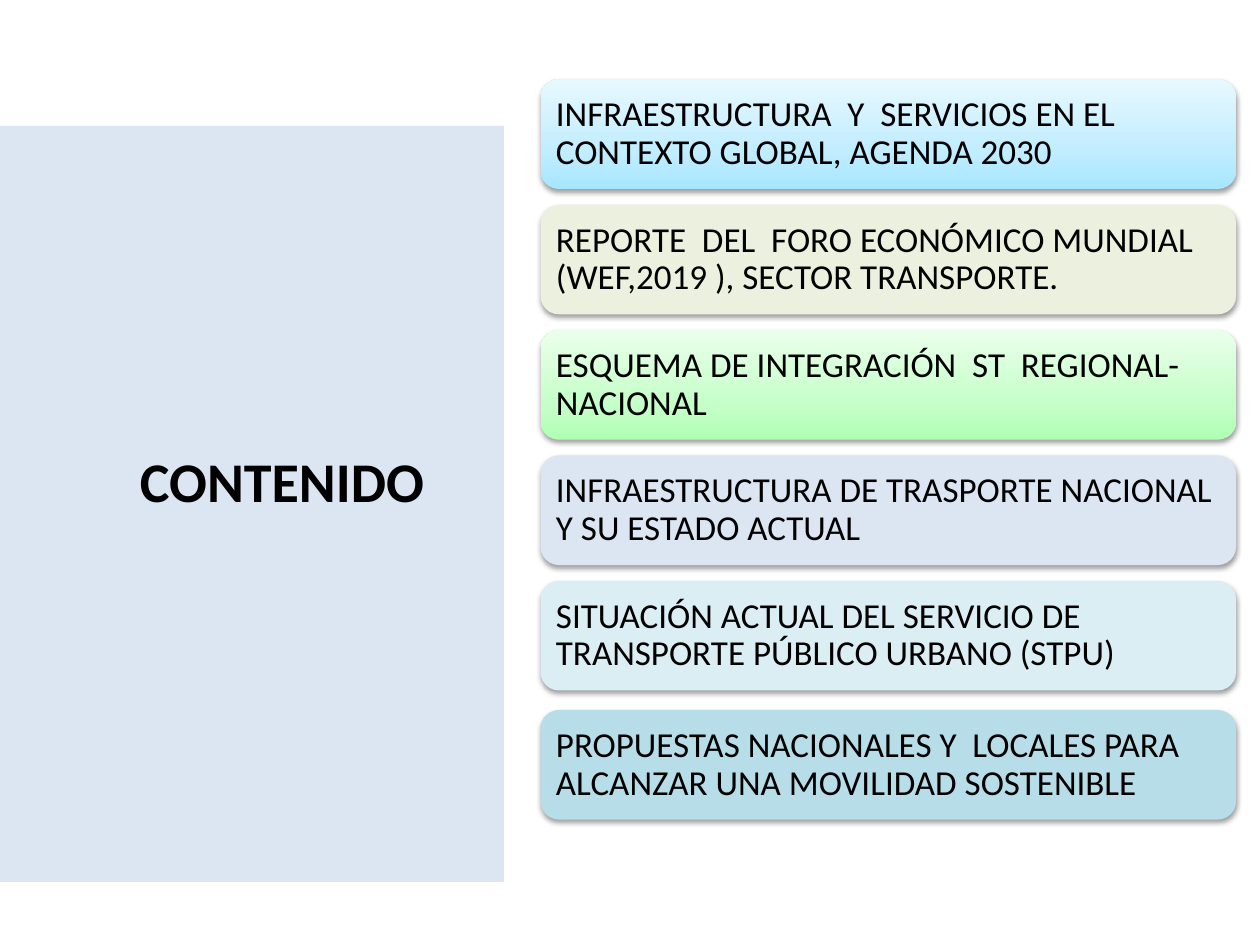
from lxml.etree import SubElement
from pptx import Presentation
from pptx.dml.color import RGBColor
from pptx.enum.shapes import MSO_SHAPE as Shape
from pptx.enum.text import MSO_ANCHOR as Anchor, PP_ALIGN as Align
from pptx.oxml.ns import qn
from pptx.util import Inches, Pt

FONT = "Calibri"
CARD_LEFT, CARD_TOP, CARD_WIDTH, CARD_HEIGHT = 4.29, 0.63, 5.52, 0.87
ROW_PITCH = 0.995
PANEL_LEFT, PANEL_TOP, PANEL_EDGE, PANEL_BOTTOM = 0.4, 0.52, 3.81, 6.96
PANEL_BULGE, CURVE_STEPS = 0.18, 40
STOPS = (0, 35, 100)

CARDS = [
    (0, "INFRAESTRUCTURA  Y  SERVICIOS EN EL CONTEXTO GLOBAL, AGENDA 2030",
     ("A7E6FF", "C1EDFF", "E7F8FF")),
    (1, "REPORTE  DEL  FORO ECONÓMICO MUNDIAL (WEF,2019 ), SECTOR TRANSPORTE.", ("EBF1DE",)),
    (2, "ESQUEMA DE INTEGRACIÓN  ST  REGIONAL-NACIONAL", ("B0FFB4", "C7FFCA", "EAFFEB")),
    (3, "INFRAESTRUCTURA DE TRASPORTE NACIONAL Y SU ESTADO ACTUAL", ("DCE6F2",)),
    (4, "SITUACIÓN ACTUAL DEL SERVICIO DE TRANSPORTE PÚBLICO URBANO (STPU)", ("DBEEF4",)),
    (5.03, "PROPUESTAS NACIONALES Y  LOCALES PARA ALCANZAR UNA MOVILIDAD SOSTENIBLE",
     ("B7DEE8",)),
]


def color(hex_code):
    """Turn a hex string into a colour."""
    return RGBColor.from_string(hex_code)


def paint(shape, colors):
    """Fill a shape with one colour or an upward gradient, without outline."""
    shape.shadow.inherit = False
    shape.line.fill.background()
    if len(colors) == 1:
        shape.fill.solid()
        shape.fill.fore_color.rgb = color(colors[0])
        return
    shape.fill.gradient()
    shape.fill.gradient_angle = 90
    stop_list = shape.element.spPr.find(f".//{qn('a:gsLst')}")
    for stop in list(stop_list):
        stop_list.remove(stop)
    for position, hex_code in zip(STOPS, colors):
        stop = SubElement(stop_list, qn("a:gs"), pos=str(position * 1000))
        SubElement(stop, qn("a:srgbClr"), val=str(color(hex_code)))


def cast_shadow(shape):
    """Give a shape a soft shadow straight below it."""
    effects = shape.element.spPr.find(qn("a:effectLst"))
    shadow = SubElement(effects, qn("a:outerShdw"), blurRad=str(Pt(3.1)),
                        dist=str(Pt(1.6)), dir="5400000", rotWithShape="0")
    tint = SubElement(shadow, qn("a:srgbClr"), val=str(color("000000")))
    SubElement(tint, qn("a:alpha"), val="38000")


def write(box, text, size, align, insets, bold=False):
    """Write one vertically centred paragraph with the given insets."""
    frame = box.text_frame
    frame.word_wrap = True
    frame.vertical_anchor = Anchor.MIDDLE
    (frame.margin_left, frame.margin_top,
     frame.margin_right, frame.margin_bottom) = map(Inches, insets)
    para = frame.paragraphs[0]
    para.alignment = align
    para.line_spacing = 1.0 if bold else 0.9
    span = para.add_run()
    span.text = text
    span.font.name, span.font.size, span.font.bold = FONT, Pt(size), bold
    span.font.color.rgb = color("000000")


def add_panel(page):
    """Draw the panel whose right side bulges along a parabola."""
    height = PANEL_BOTTOM - PANEL_TOP
    curve = []
    for step in range(CURVE_STEPS + 1):
        share = step / CURVE_STEPS
        bulge = PANEL_BULGE * 4 * share * (1 - share)
        curve.append((PANEL_EDGE + bulge, PANEL_TOP + share * height))
    builder = page.shapes.build_freeform(PANEL_LEFT, PANEL_TOP, scale=Inches(1))
    builder.add_line_segments(curve + [(PANEL_LEFT, PANEL_BOTTOM)], close=True)
    paint(builder.convert_to_shape(), ("DCE6F2",))


def add_title(page):
    """Write the heading over the panel."""
    box = page.shapes.add_textbox(*map(Inches, (0.71, 1.11, 2.8, 5.24)))
    write(box, "CONTENIDO", 32, Align.CENTER, (0.26, 0.2, 0, 0.04), bold=True)


def add_card(page, row, text, colors):
    """Add one topic card on its row."""
    place = (CARD_LEFT, CARD_TOP + row * ROW_PITCH, CARD_WIDTH, CARD_HEIGHT)
    card = page.shapes.add_shape(Shape.ROUNDED_RECTANGLE, *map(Inches, place))
    paint(card, colors)
    cast_shadow(card)
    write(card, text, 20, Align.LEFT, (0.08,) * 4)


def main():
    """Build the contents slide."""
    deck = Presentation()
    deck.slide_width, deck.slide_height = Inches(10), Inches(7.5)
    page = deck.slides.add_slide(deck.slide_layouts[6])
    add_panel(page)
    add_title(page)
    for row, text, colors in CARDS:
        add_card(page, row, text, colors)
    deck.save("out.pptx")


if __name__ == "__main__":
    main()
